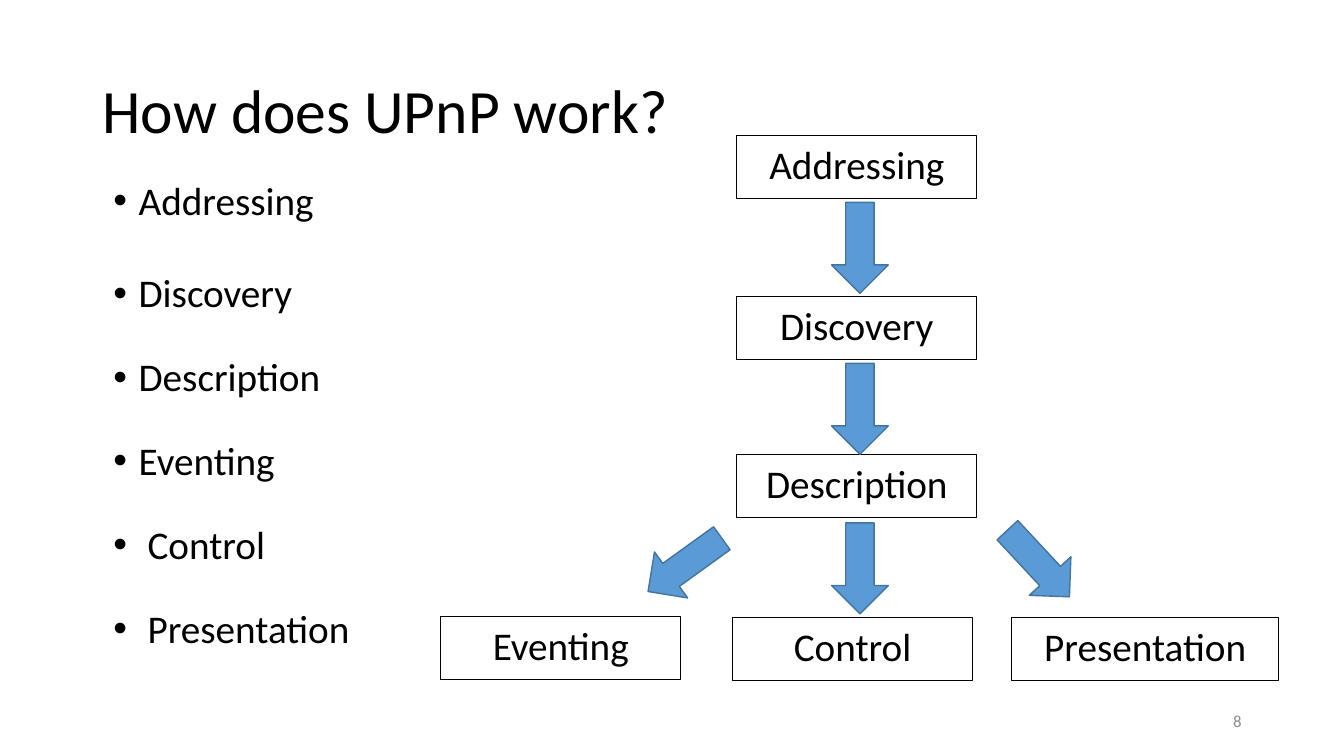
from lxml import etree
from pptx import Presentation
from pptx import util as u
from pptx.dml import color
from pptx.enum import shapes, text
from pptx.oxml import ns


def rgb(value):
    return color.RGBColor.from_string(value)


class SlideBuilder:
    font = "Calibri"
    ink = "000000"
    arrow_fill = "5B9BD5"
    arrow_line = "43739E"

    def __init__(self, slide):
        self.slide = slide

    def place(self, shape, left, top, width, height):
        shape.left, shape.top = u.Pt(left), u.Pt(top)
        shape.width, shape.height = u.Pt(width), u.Pt(height)

    def format(self, paragraph, size, align, ink=None):
        paragraph.alignment = align
        for run in paragraph.runs:
            run.font.name = self.font
            run.font.size = u.Pt(size)
            run.font.color.rgb = rgb(ink or self.ink)

    def title(self, words):
        shape = self.slide.shapes.title
        self.place(shape, 66, 28.75, 828, 104.4)
        frame = shape.text_frame
        frame.text = words
        frame.word_wrap = True
        frame.auto_size = text.MSO_AUTO_SIZE.NONE
        frame.vertical_anchor = text.MSO_ANCHOR.MIDDLE
        frame.paragraphs[0].line_spacing = 0.9
        self.format(frame.paragraphs[0], 44, text.PP_ALIGN.LEFT)

    def text_box(self, words, left, top, width, height):
        shape = self.slide.shapes.add_textbox(
            u.Pt(left), u.Pt(top), u.Pt(width), u.Pt(height))
        shape.text_frame.word_wrap = True
        shape.text_frame.text = words
        return shape.text_frame

    def bullets(self, items, gaps, left, top, width, height):
        frame = self.text_box("\n".join(items), left, top, width, height)
        for paragraph, gap in zip(frame.paragraphs, gaps):
            self.format(paragraph, 28, text.PP_ALIGN.LEFT)
            paragraph.line_spacing = 0.9
            paragraph.space_before = u.Pt(gap)
            properties = paragraph._p.get_or_add_pPr()
            properties.set("marL", str(u.Pt(18)))
            properties.set("indent", str(-u.Pt(18)))
            bullet_font = etree.SubElement(properties, ns.qn("a:buFont"))
            bullet_font.set("typeface", "Arial")
            bullet = etree.SubElement(properties, ns.qn("a:buChar"))
            bullet.set("char", "•")

    def page_number(self, number, left, top, width, height):
        frame = self.text_box(number, left, top, width, height)
        frame.vertical_anchor = text.MSO_ANCHOR.MIDDLE
        self.format(frame.paragraphs[0], 12, text.PP_ALIGN.RIGHT, "8C8C8C")

    def shape(self, kind, left, top, width, height, line, weight):
        shape = self.slide.shapes.add_shape(
            kind, u.Pt(left), u.Pt(top), u.Pt(width), u.Pt(height))
        shape.shadow.inherit = False
        shape.line.color.rgb = rgb(line)
        shape.line.width = u.Pt(weight)
        return shape

    def step(self, words, left, top, width=171.6):
        shape = self.shape(shapes.MSO_SHAPE.RECTANGLE,
                           left, top, width, 45, self.ink, 0.75)
        shape.fill.background()
        frame = shape.text_frame
        frame.text = words
        frame.word_wrap = True
        frame.vertical_anchor = text.MSO_ANCHOR.TOP
        self.format(frame.paragraphs[0], 28, text.PP_ALIGN.CENTER)

    def arrow(self, left, top, rotation=0):
        shape = self.shape(shapes.MSO_SHAPE.DOWN_ARROW,
                           left, top, 40.5, 65, self.arrow_line, 1)
        shape.fill.solid()
        shape.fill.fore_color.rgb = rgb(self.arrow_fill)
        shape.rotation = rotation


def main():
    presentation = Presentation()
    presentation.slide_width = u.Pt(960)
    presentation.slide_height = u.Pt(540)
    builder = SlideBuilder(
        presentation.slides.add_slide(presentation.slide_layouts[5]))

    builder.title("How does UPnP work?")
    builder.bullets(
        ["Addressing", "Discovery", "Description",
         "Eventing", " Control", " Presentation"],
        [0, 36] + [29.6] * 4, 74, 126, 828, 414)
    builder.page_number("8", 678, 500.5, 216, 28.75)

    for words, top in (("Addressing", 96.5), ("Discovery", 211.5),
                       ("Description", 324.5)):
        builder.step(words, 526.25, top)
    builder.step("Control", 523.25, 441)
    builder.step("Presentation", 722.5, 441, 191)
    builder.step("Eventing", 314.75, 440.5)

    for top in (144.5, 259.5, 373.5):
        builder.arrow(594, top)
    builder.arrow(469, 371, 54.2)
    builder.arrow(721.5, 370, 317.1)

    presentation.save("out.pptx")


if __name__ == "__main__":
    main()
